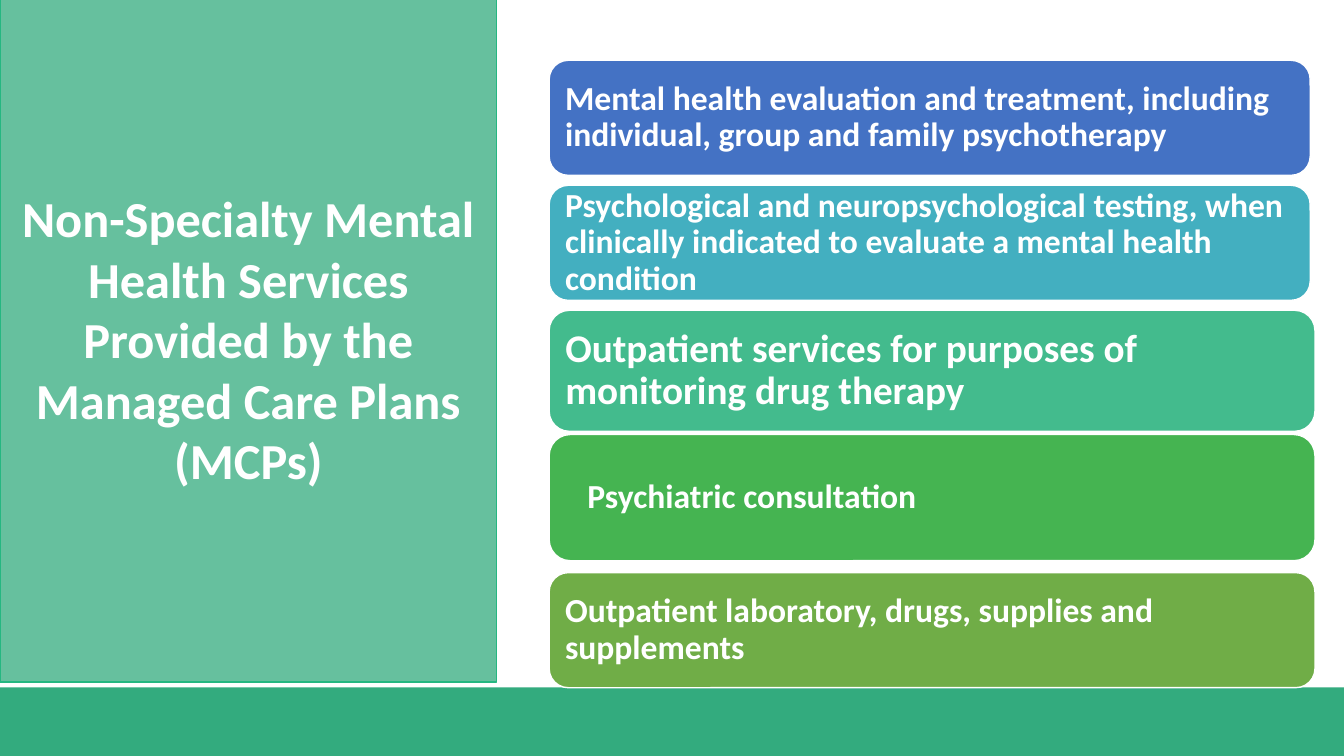
from pptx import Presentation
from pptx.dml.color import RGBColor
from pptx.enum.shapes import MSO_SHAPE as Preset
from pptx.enum.text import MSO_ANCHOR as Anchor, MSO_AUTO_SIZE as AutoSize, PP_ALIGN as Align
from pptx.util import Cm, Pt

SLIDE_WIDTH, SLIDE_HEIGHT = 33.87, 19.05
CARD_LEFT = 13.84
TITLE = "Non-Specialty Mental Health Services Provided by the Managed Care Plans (MCPs)"

# text, top, width, height, fill, font size, left inset
SERVICES = [
    ("Mental health evaluation and treatment, including individual, group and family psychotherapy",
     1.52, 19.18, 2.9, "4472C4", 24, 0.26),
    ("Psychological and neuropsychological testing, when clinically indicated to evaluate "
     "a mental health condition", 4.67, 19.18, 2.9, "43AFC0", 24, 0.26),
    ("Outpatient services for purposes of monitoring drug therapy",
     7.82, 19.3, 3.05, "43BB8D", 28, 0.26),
    ("Psychiatric consultation", 10.95, 19.3, 3.18, "45B451", 24, 0.81),
    ("Outpatient laboratory, drugs, supplies and supplements",
     14.43, 19.3, 2.9, "70AD47", 24, 0.26),
]


def color(hex_string):
    return RGBColor.from_string(hex_string)


def paint(shape, fill, line=None):
    shape.fill.solid()
    shape.fill.fore_color.rgb = color(fill)
    if line:
        shape.line.color.rgb = color(line)
        shape.line.width = Pt(1)
    else:
        shape.line.fill.background()


def write(shape, text, size, align):
    """Put one bold white paragraph in the vertical middle of the shape."""
    frame = shape.text_frame
    frame.text = text
    frame.word_wrap = True
    frame.auto_size = AutoSize.NONE
    frame.vertical_anchor = Anchor.MIDDLE
    paragraph = frame.paragraphs[0]
    paragraph.alignment = align
    font = paragraph.font
    font.name, font.size, font.bold = "Calibri", Pt(size), True
    font.color.rgb = color("FFFFFF")
    return paragraph


def add_footer_bar(slide, left, top, width, height):
    bar = slide.shapes.add_shape(Preset.RECTANGLE, Cm(left), Cm(top), Cm(width), Cm(height))
    bar.shadow.inherit = False
    paint(bar, "33AB7E")


def place_title_panel(slide, left, top, width, height):
    panel = slide.shapes.title
    panel.left, panel.top, panel.width, panel.height = Cm(left), Cm(top), Cm(width), Cm(height)
    paint(panel, "66C09E", "25B781")
    write(panel, TITLE, 36, Align.CENTER)


def add_service_card(slide, left, top, width, height, text, fill, size, inset):
    card = slide.shapes.add_shape(Preset.ROUNDED_RECTANGLE,
                                  Cm(left), Cm(top), Cm(width), Cm(height))
    card.shadow.inherit = False
    paint(card, fill, "FFFFFF")
    paragraph = write(card, text, size, Align.LEFT)
    paragraph.line_spacing = 0.9
    frame = card.text_frame
    frame.margin_left, frame.margin_right = Cm(inset), Cm(0.26)
    frame.margin_top = frame.margin_bottom = Cm(0.1)


def main():
    presentation = Presentation()
    presentation.slide_width = Cm(SLIDE_WIDTH)
    presentation.slide_height = Cm(SLIDE_HEIGHT)
    slide = presentation.slides.add_slide(presentation.slide_layouts[5])

    add_footer_bar(slide, 0, 17.32, SLIDE_WIDTH, 1.73)
    place_title_panel(slide, 0, -0.13, 12.52, 17.32)
    for text, top, width, height, fill, size, inset in SERVICES:
        add_service_card(slide, CARD_LEFT, top, width, height, text, fill, size, inset)

    presentation.save("out.pptx")


if __name__ == "__main__":
    main()
